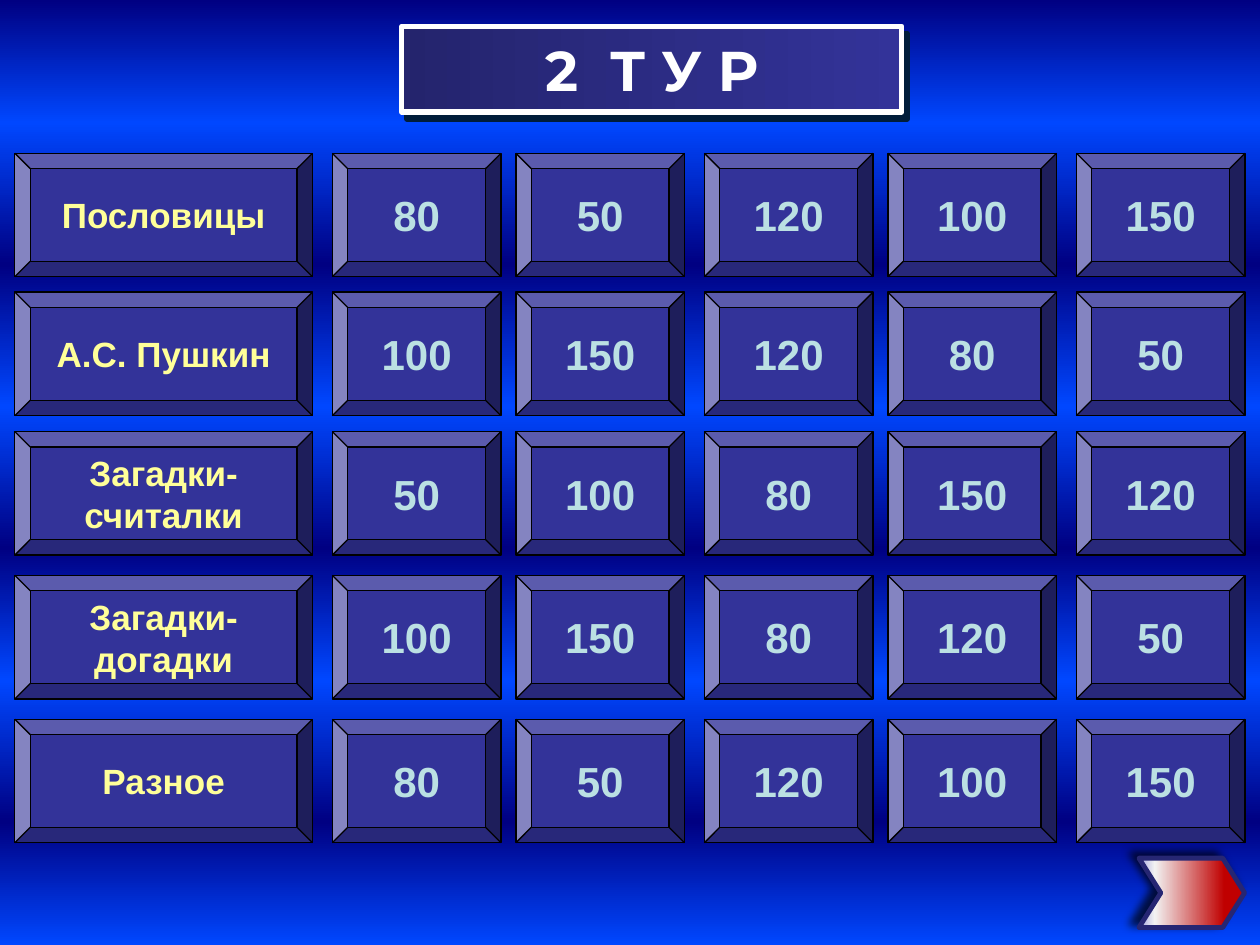
from lxml import etree
from pptx import Presentation
from pptx.dml.color import RGBColor
from pptx.enum.shapes import MSO_SHAPE
from pptx.enum.text import MSO_ANCHOR, MSO_AUTO_SIZE, PP_ALIGN
from pptx.oxml.ns import qn
from pptx.util import Cm, Pt

BEVEL, CHEVRON = MSO_SHAPE.BEVEL, MSO_SHAPE.CHEVRON
MIDDLE, CENTER, NO_AUTOFIT = MSO_ANCHOR.MIDDLE, PP_ALIGN.CENTER, MSO_AUTO_SIZE.NONE

INDIGO = RGBColor(0x33, 0x33, 0x99)
DARK_INDIGO = RGBColor(0x24, 0x24, 0x6D)
ARROW_EDGE = RGBColor(0x26, 0x26, 0x73)
LAVENDER = RGBColor(0xA3, 0xA3, 0xE0)
NAVY = RGBColor(0x00, 0x00, 0x82)
BRIGHT_BLUE = RGBColor(0x00, 0x47, 0xFF)
TITLE_SHADOW = RGBColor(0x00, 0x1D, 0x3A)
PALE_YELLOW = RGBColor(0xFF, 0xFF, 0x99)
PALE_CYAN = RGBColor(0xBB, 0xE0, 0xE3)
RED = RGBColor(0xC0, 0x00, 0x00)
PALE_GREY = RGBColor(0xF2, 0xF2, 0xF2)
WHITE = RGBColor(0xFF, 0xFF, 0xFF)
BLACK = RGBColor(0x00, 0x00, 0x00)

ROUND_TITLE = "2  Т У Р"
BOARD = [
    ("Пословицы", (80, 50, 120, 100, 150)),
    ("А.С. Пушкин", (100, 150, 120, 80, 50)),
    ("Загадки-\nсчиталки", (50, 100, 80, 150, 120)),
    ("Загадки-\nдогадки", (100, 150, 80, 120, 50)),
    ("Разное", (80, 50, 120, 100, 150)),
]
ROW_TOPS = (3.09, 5.89, 8.7, 11.6, 14.5)
PRICE_LEFTS = (6.7, 10.4, 14.2, 17.9, 21.7)
CATEGORY_LEFT, CATEGORY_WIDTH, PRICE_WIDTH, TILE_HEIGHT = 0.3, 6, 3.4, 2.49
BACKDROP_STOPS = (0, 13, 28, 43, 58, 72, 87, 100)


def add_color(parent, color):
    return etree.SubElement(parent, qn("a:srgbClr"), val=str(color))


def set_gradient(fill, owner, stops, angle):
    fill.gradient()
    gradient = next(owner.iter(qn("a:gradFill")))
    stop_list = gradient.find(qn("a:gsLst"))
    stop_list.clear()
    for position, color in stops:
        stop = etree.SubElement(stop_list, qn("a:gs"), pos=str(position * 1000))
        add_color(stop, color)
    gradient.find(qn("a:lin")).set("ang", str(angle * 60000))


def set_outline(shape, color, width):
    shape.line.color.rgb = color
    shape.line.width = Pt(width)


def set_shadow(shape, color, opacity, blur, distance, angle):
    shape.shadow.inherit = False
    effects = shape._element.spPr.find(qn("a:effectLst"))
    shadow = etree.SubElement(
        effects, qn("a:outerShdw"), blurRad=str(Pt(blur)), dist=str(Pt(distance)),
        dir=str(angle * 60000), algn="ctr", rotWithShape="0")
    etree.SubElement(add_color(shadow, color), qn("a:alpha"), val=str(opacity * 1000))


def set_text(shape, text, font_name, size, color):
    frame = shape.text_frame
    frame.text = text
    frame.word_wrap = False
    frame.auto_size = NO_AUTOFIT
    frame.vertical_anchor = MIDDLE
    for paragraph in frame.paragraphs:
        paragraph.alignment = CENTER
        paragraph.font.name = font_name
        paragraph.font.size = Pt(size)
        paragraph.font.bold = True
        paragraph.font.color.rgb = color


def add_tile(slide, left, top, width, text, size, color):
    tile = slide.shapes.add_shape(BEVEL, Cm(left), Cm(top), Cm(width), Cm(TILE_HEIGHT))
    tile.shadow.inherit = False
    tile.fill.solid()
    tile.fill.fore_color.rgb = INDIGO
    set_outline(tile, BLACK, 0.75)
    set_text(tile, text, "Arial", size, color)


def add_board(slide):
    for top, (category, prices) in zip(ROW_TOPS, BOARD):
        add_tile(slide, CATEGORY_LEFT, top, CATEGORY_WIDTH, category, 20, PALE_YELLOW)
        for left, price in zip(PRICE_LEFTS, prices):
            add_tile(slide, left, top, PRICE_WIDTH, str(price), 24, PALE_CYAN)


def format_title(title):
    title.left, title.top, title.width, title.height = Cm(8.1), Cm(0.53), Cm(10.08), Cm(1.73)
    outline = etree.SubElement(title._element.spPr, qn("a:prstGeom"), prst="roundRect")
    adjustments = etree.SubElement(outline, qn("a:avLst"))
    etree.SubElement(adjustments, qn("a:gd"), name="adj", fmla="val 50000")
    set_gradient(title.fill, title._element, [(0, DARK_INDIGO), (100, INDIGO)], 0)
    set_outline(title, WHITE, 3)
    set_shadow(title, TITLE_SHADOW, 100, 0, 5, 53)
    set_text(title, ROUND_TITLE, "Montserrat", 32, WHITE)


def add_next_arrow(slide):
    arrow = slide.shapes.add_shape(CHEVRON, Cm(22.96), Cm(17.3), Cm(2.13), Cm(1.4))
    arrow.adjustments[0] = 0.315
    set_gradient(arrow.fill, arrow._element, [(19, RED), (85, PALE_GREY), (100, LAVENDER)], 180)
    set_outline(arrow, ARROW_EDGE, 2.75)
    set_shadow(arrow, BLACK, 70, 5, 5, 210)


def main():
    deck = Presentation()
    deck.slide_width, deck.slide_height = Cm(25.4), Cm(19.05)
    slide = deck.slides.add_slide(deck.slide_layouts[5])
    backdrop = [(position, BRIGHT_BLUE if index % 2 else NAVY)
                for index, position in enumerate(BACKDROP_STOPS)]
    set_gradient(slide.background.fill, slide._element, backdrop, 90)
    add_board(slide)
    add_next_arrow(slide)
    format_title(slide.shapes.title)
    deck.save("out.pptx")


if __name__ == "__main__":
    main()
